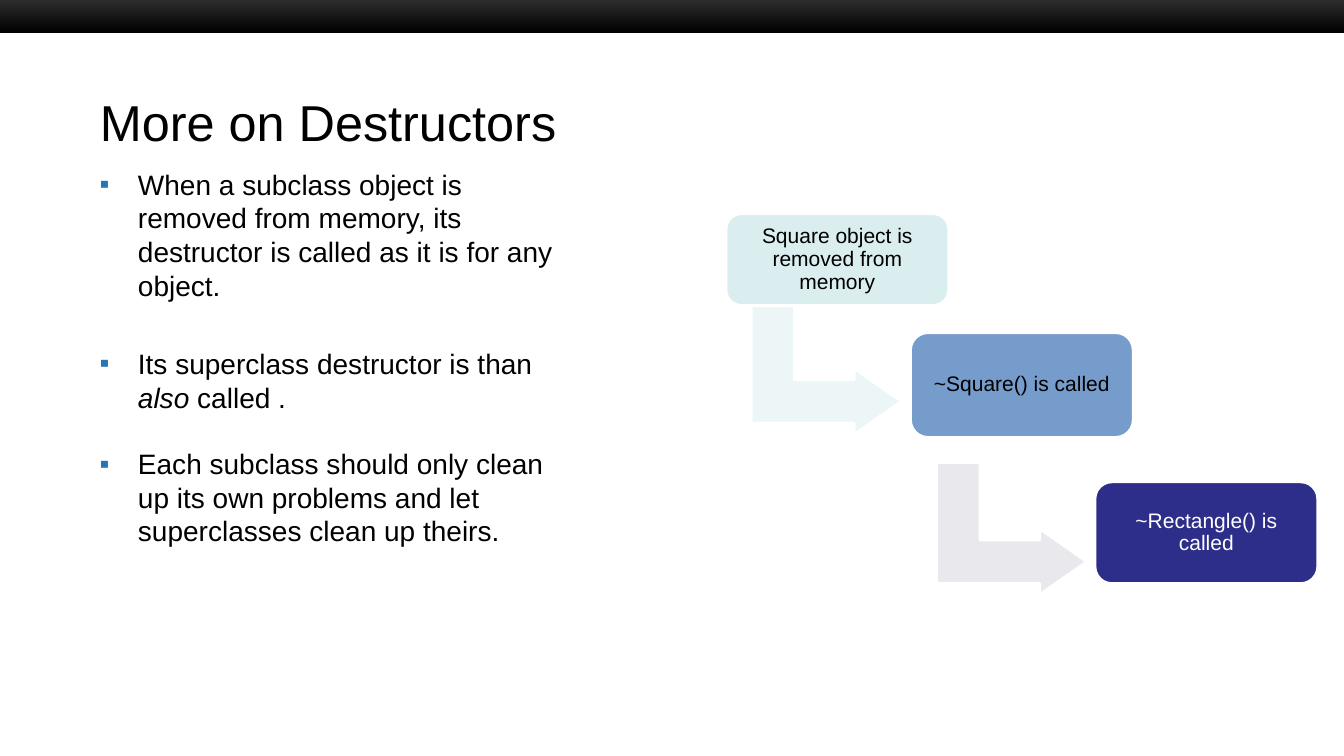
"""Build the slide on destructors with its bullets and call chain."""
from dataclasses import dataclass

from lxml import etree
from pptx import Presentation, util as u
from pptx.dml.color import RGBColor
from pptx.enum import shapes, text
from pptx.oxml.ns import qn

FONT = "Arial"
BLACK, WHITE = "000000", "FFFFFF"
SHAPE = shapes.MSO_SHAPE


@dataclass
class Step:
    words: str
    left: float
    top: float
    height: float
    fill: str
    ink: str


@dataclass
class Bend:
    left: float
    top: float
    fill: str


@dataclass
class Point:
    runs: list[tuple[str, bool]]
    gap: float


STEPS = [
    Step("Square object is removed from memory", 7.2, 2.12, 0.91, "DAEDEF", BLACK),
    Step("~Square() is called", 9.03, 3.3, 1.04, "759CCB", BLACK),
    Step("~Rectangle() is called", 10.86, 4.78, 1.01, "2D2D8A", WHITE),
]
BENDS = [Bend(7.54, 2.91, "EDF6F7"), Bend(9.38, 4.5, "E8E8ED")]
POINTS = [
    Point([("When a subclass object is removed from memory, its destructor "
            "is called as it is for any object.", False)], 0),
    Point([("Its superclass destructor is than ", False), ("also", True),
           (" called .", False)], 32),
    Point([("Each subclass should only clean up its own problems and let "
            "superclasses clean up theirs.", False)], 23.5),
]


def tint(code: str) -> RGBColor:
    return RGBColor.from_string(code)


def place(left: float, top: float, width: float, height: float) -> list:
    return [u.Inches(n) for n in (left, top, width, height)]


def add_run(para, words: str, size: float, ink: str, slant: bool = False) -> None:
    run = para.add_run()
    run.text = words
    font = run.font
    font.name, font.size, font.italic = FONT, u.Pt(size), slant
    font.color.rgb = tint(ink)


def set_frame(frame, side: float, edge: float, anchor) -> None:
    frame.word_wrap = True
    frame.vertical_anchor = anchor
    frame.margin_left = frame.margin_right = u.Inches(side)
    frame.margin_top = frame.margin_bottom = u.Inches(edge)


def add_block(slide, kind, box: list, fill: str, folds: list[float]):
    block = slide.shapes.add_shape(kind, *box)
    block.shadow.inherit = False
    block.fill.solid()
    block.fill.fore_color.rgb = tint(fill)
    block.line.color.rgb = tint(WHITE)
    block.line.width = u.Pt(2)
    for spot, fold in enumerate(folds):
        block.adjustments[spot] = fold
    return block


def draw_bar(slide) -> None:
    bar = slide.shapes.add_shape(SHAPE.RECTANGLE, *place(0, -0.05, 13.33, 0.38))
    bar.shadow.inherit = False
    bar.line.fill.background()
    bar.fill.gradient()
    bar.fill.gradient_angle = 270
    for stop, code in zip(bar.fill.gradient_stops, ("333333", BLACK)):
        stop.color.rgb = tint(code)


def draw_title(slide, words: str) -> None:
    title = slide.shapes.title
    title.left, title.top, title.width, title.height = place(0.89, 0.83, 11.56, 0.75)
    set_frame(title.text_frame, 0.1, 0.05, text.MSO_ANCHOR.MIDDLE)
    para = title.text_frame.paragraphs[0]
    para.alignment = text.PP_ALIGN.LEFT
    add_run(para, words, 36, BLACK)


def add_mark(para) -> None:
    props = para._p.get_or_add_pPr()
    props.set("marL", str(u.Inches(0.38)))
    props.set("indent", str(u.Inches(-0.38)))
    color = etree.SubElement(props, qn("a:buClr"))
    etree.SubElement(color, qn("a:srgbClr"), val="2675B4")
    etree.SubElement(props, qn("a:buFont"), typeface=FONT)
    etree.SubElement(props, qn("a:buChar"), char="▪")


def draw_points(slide, points: list[Point]) -> None:
    frame = slide.shapes.add_textbox(*place(0.89, 1.61, 4.94, 4.25)).text_frame
    set_frame(frame, 0.1, 0.05, text.MSO_ANCHOR.TOP)
    for spot, point in enumerate(points):
        para = frame.add_paragraph() if spot else frame.paragraphs[0]
        add_mark(para)
        para.space_before = u.Pt(point.gap)
        for words, slant in point.runs:
            add_run(para, words, 20, BLACK, slant)


def draw_bend(slide, bend: Bend) -> None:
    box = place(bend.left, bend.top, 1.31, 1.49)
    arrow = add_block(slide, SHAPE.BENT_UP_ARROW, box, bend.fill, [0.328, 0.25, 0.358])
    arrow.rotation = 90


def draw_step(slide, step: Step) -> None:
    box = place(step.left, step.top, 2.21, step.height)
    card = add_block(slide, SHAPE.ROUNDED_RECTANGLE, box, step.fill, [0.167])
    set_frame(card.text_frame, 0.11, 0.11, text.MSO_ANCHOR.MIDDLE)
    para = card.text_frame.paragraphs[0]
    para.alignment = text.PP_ALIGN.CENTER
    para.line_spacing = 0.9
    add_run(para, step.words, 15, step.ink)


def main() -> None:
    deck = Presentation()
    deck.slide_width, deck.slide_height = u.Inches(13.33), u.Inches(7.5)
    slide = deck.slides.add_slide(deck.slide_layouts[5])
    draw_bar(slide)
    draw_title(slide, "More on Destructors")
    draw_points(slide, POINTS)
    for bend in BENDS:
        draw_bend(slide, bend)
    for step in STEPS:
        draw_step(slide, step)
    deck.save("out.pptx")


if __name__ == "__main__":
    main()
